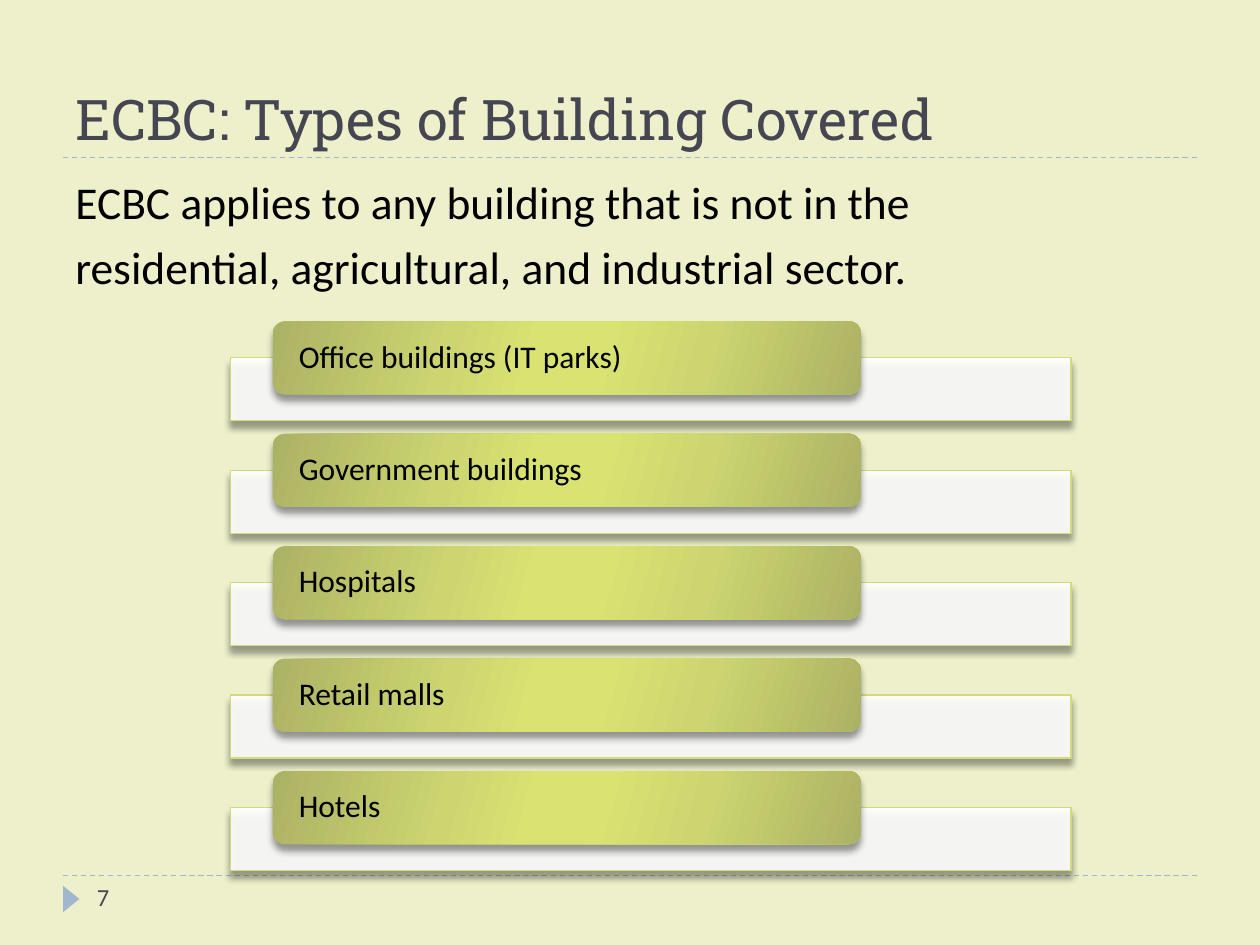
from dataclasses import dataclass

from lxml.etree import SubElement
from pptx import Presentation
from pptx.dml.color import RGBColor
from pptx.enum.dml import MSO_LINE
from pptx.enum.shapes import MSO_CONNECTOR, MSO_SHAPE
from pptx.enum.text import MSO_ANCHOR
from pptx.oxml.ns import qn
from pptx.util import Inches, Pt


@dataclass(frozen=True)
class Theme:
    background: str = "EDF0CA"
    rule: str = "9FB8CD"
    heading: str = "464653"
    text: str = "000000"
    bar: str = "FFFFFF"
    bar_line: str = "D2DA7A"
    tab_stops: tuple = ((0, "ACB264"), (30, "CCD570"), (45, "D9E371"),
                        (55, "D9E371"), (73, "CCD570"), (100, "ACB264"))
    title_font: str = "Roboto Slab"
    body_font: str = "Calibri"
    title_size: int = 32
    body_size: int = 26
    tab_size: int = 18
    number_size: int = 14


THEME = Theme()
BUILDING_TYPES = ["Office buildings (IT parks)", "Government buildings",
                  "Hospitals", "Retail malls", "Hotels"]


def rgb(color):
    return RGBColor.from_string(color)


def box_inches(box):
    return [Inches(v) for v in box]


def style_paragraph(p, size, color=THEME.text, font=THEME.body_font):
    p.font.name = font
    p.font.size = Pt(size)
    p.font.color.rgb = rgb(color)


def add_text(slide, box, lines, size, color=THEME.text, font=THEME.body_font,
             anchor=MSO_ANCHOR.TOP, space_before=0):
    tf = slide.shapes.add_textbox(*box_inches(box)).text_frame
    tf.word_wrap = True
    tf.vertical_anchor = anchor
    for i, line in enumerate(lines):
        p = tf.paragraphs[0] if i == 0 else tf.add_paragraph()
        p.text = line
        if i:
            p.space_before = Pt(space_before)
        style_paragraph(p, size, color, font)


def add_rule(slide, left, top, width):
    """Draw a dashed horizontal line."""
    line = slide.shapes.add_connector(
        MSO_CONNECTOR.STRAIGHT, *box_inches((left, top, left + width, top)))
    line.line.color.rgb = rgb(THEME.rule)
    line.line.width = Pt(0.75)
    line.line.dash_style = MSO_LINE.DASH
    SubElement(line._element.spPr, qn("a:effectLst"))


def add_color(parent, color, alpha=None):
    clr = SubElement(parent, qn("a:srgbClr"), val=color)
    if alpha is not None:
        SubElement(clr, qn("a:alpha"), val=str(alpha * 1000))


def add_shadow(sp):
    sp.shadow.inherit = False
    effects = sp._element.spPr.find(qn("a:effectLst"))
    shadow = SubElement(effects, qn("a:outerShdw"), blurRad=str(Pt(4)),
                        dist=str(Pt(3.4)), dir="5400000", rotWithShape="0")
    add_color(shadow, "000000", 40)


def fill_gradient(sp, stops, angle):
    """Fill with (percent, colour) stops at a clockwise angle."""
    sp.fill.gradient()
    sp.fill.gradient_angle = 360 - angle
    stop_list = sp._element.spPr.find(qn("a:gradFill")).find(qn("a:gsLst"))
    for stop in list(stop_list):
        stop_list.remove(stop)
    for percent, color in stops:
        add_color(SubElement(stop_list, qn("a:gs"), pos=str(percent * 1000)), color)


def add_bar(slide, box):
    sp = slide.shapes.add_shape(MSO_SHAPE.RECTANGLE, *box_inches(box))
    sp.fill.solid()
    sp.fill.fore_color.rgb = rgb(THEME.bar)
    color = sp._element.spPr.find(qn("a:solidFill"))[0]
    SubElement(color, qn("a:alpha"), val="90000")
    sp.line.color.rgb = rgb(THEME.bar_line)
    sp.line.width = Pt(0.75)
    add_shadow(sp)


def add_tab(slide, box, label):
    sp = slide.shapes.add_shape(MSO_SHAPE.ROUNDED_RECTANGLE, *box_inches(box))
    fill_gradient(sp, THEME.tab_stops, 16)
    sp.line.fill.background()
    add_shadow(sp)
    tf = sp.text_frame
    tf.word_wrap = True
    tf.vertical_anchor = MSO_ANCHOR.MIDDLE
    tf.margin_left = tf.margin_right = Inches(0.18)
    tf.margin_top = tf.margin_bottom = 0
    p = tf.paragraphs[0]
    p.text = label
    p.alignment = 1
    p.line_spacing = 0.9
    style_paragraph(p, THEME.tab_size)


def add_building_list(slide, box, labels):
    """Stack one bar per label, each with a tab overlapping its top edge."""
    left, top, width, height = box
    tab_height, bar_height, bar_offset = 0.58, 0.5, 0.29
    pitch = (height - bar_offset - bar_height) / (len(labels) - 1)
    for i, label in enumerate(labels):
        y = top + i * pitch
        add_bar(slide, (left, y + bar_offset, width, bar_height))
        add_tab(slide, (left + width * 0.05, y, width * 0.7, tab_height), label)


def add_header(slide, box, title):
    left, top, width, height = box
    add_rule(slide, left, top + height, width)
    add_text(slide, box, [title], THEME.title_size, THEME.heading,
             THEME.title_font, MSO_ANCHOR.BOTTOM)


def add_footer(slide, box, number):
    left, top, width, height = box
    add_rule(slide, left, top, width)
    marker = slide.shapes.add_shape(MSO_SHAPE.ISOSCELES_TRIANGLE,
                                    *box_inches((left - 0.04, top + 0.12, 0.21, 0.13)))
    marker.rotation = 90
    marker.fill.solid()
    marker.fill.fore_color.rgb = rgb(THEME.rule)
    marker.line.fill.background()
    marker.shadow.inherit = False
    add_text(slide, (left + 0.17, top, 2.17, height), [number],
             THEME.number_size, THEME.heading)


def main():
    prs = Presentation()
    prs.slide_width, prs.slide_height = Inches(10), Inches(7.5)
    slide = prs.slides.add_slide(prs.slide_layouts[6])
    slide.background.fill.solid()
    slide.background.fill.fore_color.rgb = rgb(THEME.background)

    add_footer(slide, (0.5, 6.95, 9, 0.4), "7")
    add_header(slide, (0.5, 0.17, 9, 1.08), "ECBC: Types of Building Covered")
    add_text(slide, (0.5, 1.33, 9, 1.1),
             ["ECBC applies to any building that is not in the",
              "residential, agricultural, and industrial sector."],
             THEME.body_size, space_before=6)
    add_building_list(slide, (1.83, 2.55, 6.67, 4.36), BUILDING_TYPES)
    prs.save("out.pptx")


if __name__ == "__main__":
    main()
